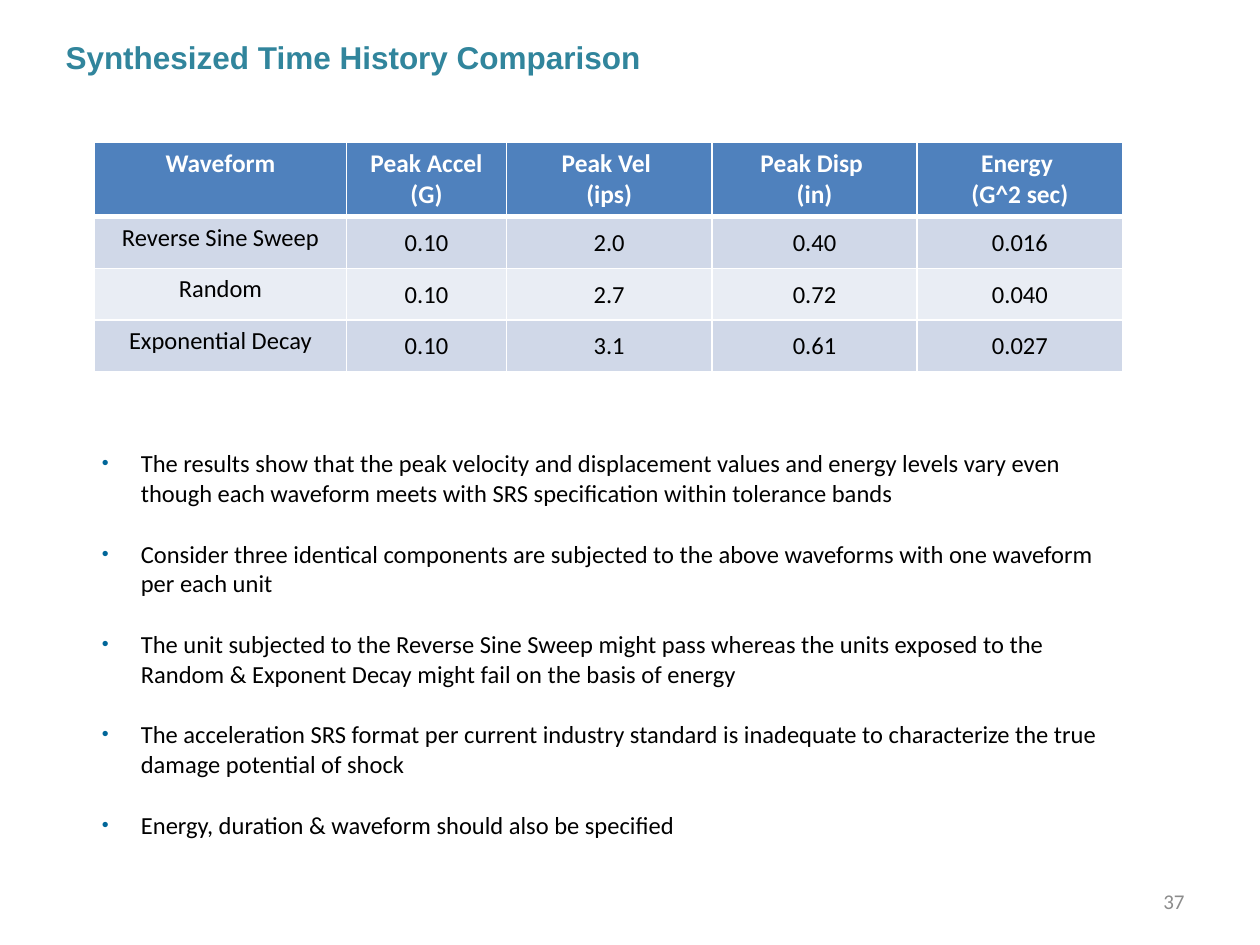
from lxml.etree import SubElement
from pptx import Presentation
from pptx.dml.color import RGBColor
from pptx.enum.text import MSO_ANCHOR, MSO_AUTO_SIZE, PP_ALIGN
from pptx.oxml.ns import qn
from pptx.util import Inches, Pt

HEADERS = ["Waveform", "Peak Accel (G)", "Peak Vel \n(ips)", "Peak Disp \n(in)", "Energy \n(G^2 sec)"]
RESULTS = [
    ["Reverse Sine Sweep", "0.10", "2.0", "0.40", "0.016"],
    ["Random", "0.10", "2.7", "0.72", "0.040"],
    ["Exponential Decay", "0.10", "3.1", "0.61", "0.027"],
]
COLUMN_WIDTHS = [2, 1.27, 1.63, 1.63, 1.63]
HEADER_HEIGHT, ROW_HEIGHT = 0.57, 0.41
FINDINGS = [
    "The results show that the peak velocity and displacement values and energy levels vary even "
    "though each waveform meets with SRS specification within tolerance bands",
    "Consider three identical components are subjected to the above waveforms with one waveform per each unit",
    "The unit subjected to the Reverse Sine Sweep might pass whereas the units exposed to the "
    "Random & Exponent Decay might fail on the basis of energy",
    "The acceleration SRS format per current industry standard is inadequate to characterize the true "
    "damage potential of shock",
    "Energy, duration & waveform should also be specified",
]


def rgb(color):
    """Return the colour of a hex string."""
    return RGBColor.from_string(color)


def write(p, text, size=14, color="000000", font="Calibri", bold=False, align=PP_ALIGN.LEFT):
    """Fill a paragraph with formatted text."""
    p.text = text
    p.alignment = align
    for r in p.runs:
        r.font.size = Pt(size)
        r.font.name = font
        r.font.bold = bold
        r.font.color.rgb = rgb(color)


def add_box(s, left, top, width, height):
    """Add a wrapping text box and return its text frame."""
    tf = s.shapes.add_textbox(Inches(left), Inches(top), Inches(width), Inches(height)).text_frame
    tf.word_wrap = True
    return tf


def set_border(cell, side, width, color="FFFFFF"):
    """Draw one solid border of a cell."""
    ln = SubElement(cell._tc.get_or_add_tcPr(), qn(f"a:ln{side}"), w=str(Pt(width)))
    SubElement(SubElement(ln, qn("a:solidFill")), qn("a:srgbClr"), val=color)


def set_bullet(p, indent=0.31, color="006699", size=80):
    """Give a paragraph a hanging bullet."""
    pPr = p._p.get_or_add_pPr()
    pPr.set("marL", str(Inches(indent)))
    pPr.set("indent", str(-Inches(indent)))
    SubElement(SubElement(pPr, qn("a:buClr")), qn("a:srgbClr"), val=color)
    SubElement(pPr, qn("a:buSzPct"), val=str(size * 1000))
    SubElement(pPr, qn("a:buFont"), typeface="Arial")
    SubElement(pPr, qn("a:buChar"), char="•")


def place_title(s, text, left, top, width, height):
    """Move and format the title placeholder."""
    sp = s.shapes.title
    sp.left, sp.top, sp.width, sp.height = map(Inches, (left, top, width, height))
    tf = sp.text_frame
    tf.word_wrap = True
    tf.auto_size = MSO_AUTO_SIZE.NONE
    tf.vertical_anchor = MSO_ANCHOR.TOP
    write(tf.paragraphs[0], text, size=18, color="31859C", font="Arial", bold=True)


def format_cell(cell, text, row, column):
    """Write one table cell with its fill, borders and margins."""
    header = row == 0
    for side, width in (("L", 1), ("R", 1), ("T", 3 if row == 1 else 1), ("B", 3 if header else 1)):
        set_border(cell, side, width)
    cell.fill.solid()
    cell.fill.fore_color.rgb = rgb("4F81BD" if header else "D0D8E8" if row % 2 else "E9EDF4")
    if not header and column > 0:
        cell.vertical_anchor = MSO_ANCHOR.MIDDLE
        cell.margin_left = cell.margin_right = cell.margin_top = Inches(0.01)
        cell.margin_bottom = 0
    write(cell.text_frame.paragraphs[0], text, size=14.5 if header else 14,
          color="FFFFFF" if header else "000000", bold=header, align=PP_ALIGN.CENTER)


def place_table(s, left, top, width, height):
    """Add the waveform comparison table."""
    rows = [HEADERS] + RESULTS
    table = s.shapes.add_table(len(rows), len(HEADERS), Inches(left), Inches(top),
                               Inches(width), Inches(height)).table
    for column, column_width in zip(table.columns, COLUMN_WIDTHS):
        column.width = Inches(column_width)
    for i, values in enumerate(rows):
        table.rows[i].height = Inches(ROW_HEIGHT if i else HEADER_HEIGHT)
        for j, text in enumerate(values):
            format_cell(table.cell(i, j), text, i, j)


def place_findings(s, left, top, width, height):
    """Add the bulleted findings."""
    tf = add_box(s, left, top, width, height)
    for i, text in enumerate(FINDINGS):
        p = tf.add_paragraph() if i else tf.paragraphs[0]
        set_bullet(p)
        p.space_before = Pt(6 if i else 0)
        p.space_after = Pt(12)
        write(p, text)


def place_page_number(s, text, left, top, width, height):
    """Add the page number."""
    tf = add_box(s, left, top, width, height)
    tf.vertical_anchor = MSO_ANCHOR.MIDDLE
    write(tf.paragraphs[0], text, size=12, color="8C8C8C", align=PP_ALIGN.RIGHT)


def main():
    """Build and save the slide."""
    prs = Presentation()
    prs.slide_width, prs.slide_height = Inches(10), Inches(7.5)
    s = prs.slides.add_slide(prs.slide_layouts[5])
    place_title(s, "Synthesized Time History Comparison", 0.42, 0.25, 7.25, 0.4)
    place_table(s, 0.75, 1.13, sum(COLUMN_WIDTHS), HEADER_HEIGHT + ROW_HEIGHT * len(RESULTS))
    place_findings(s, 0.71, 3.51, 8.25, 3.31)
    place_page_number(s, "37", 7.17, 6.95, 2.33, 0.4)
    prs.save("out.pptx")


if __name__ == "__main__":
    main()
